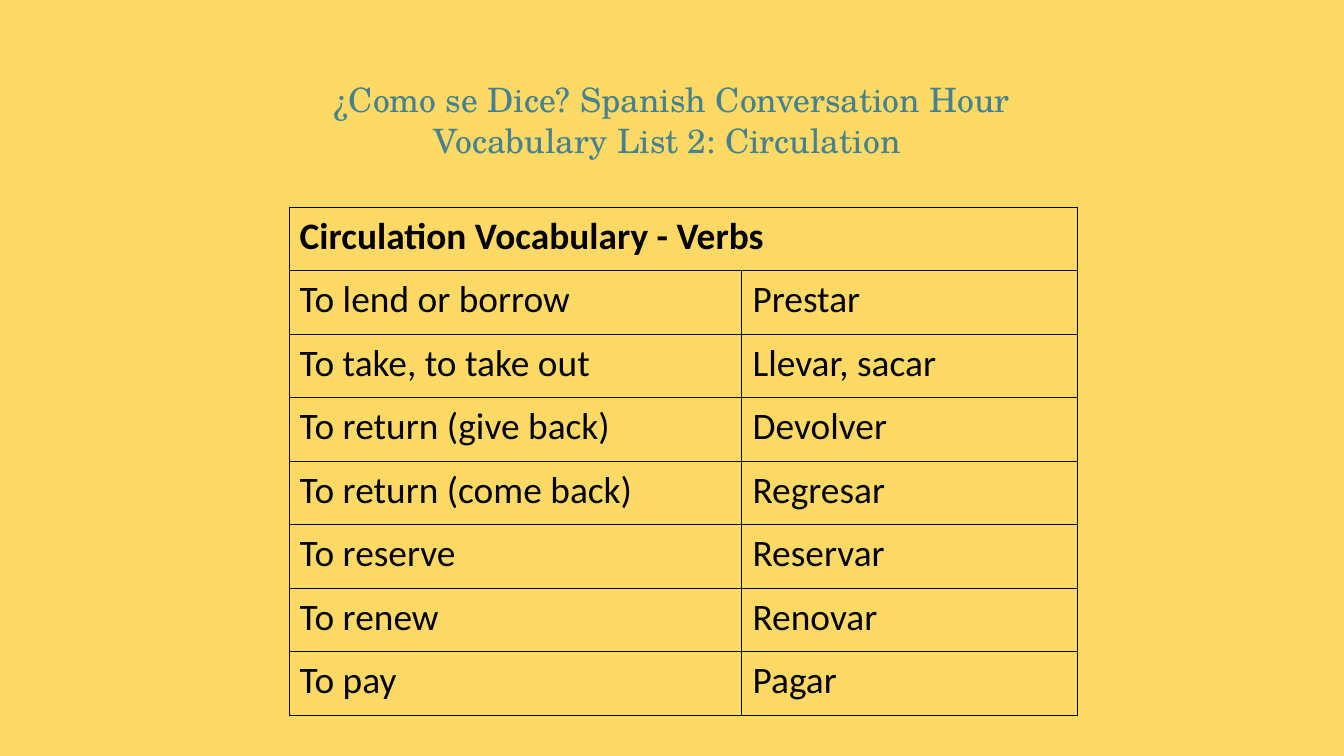
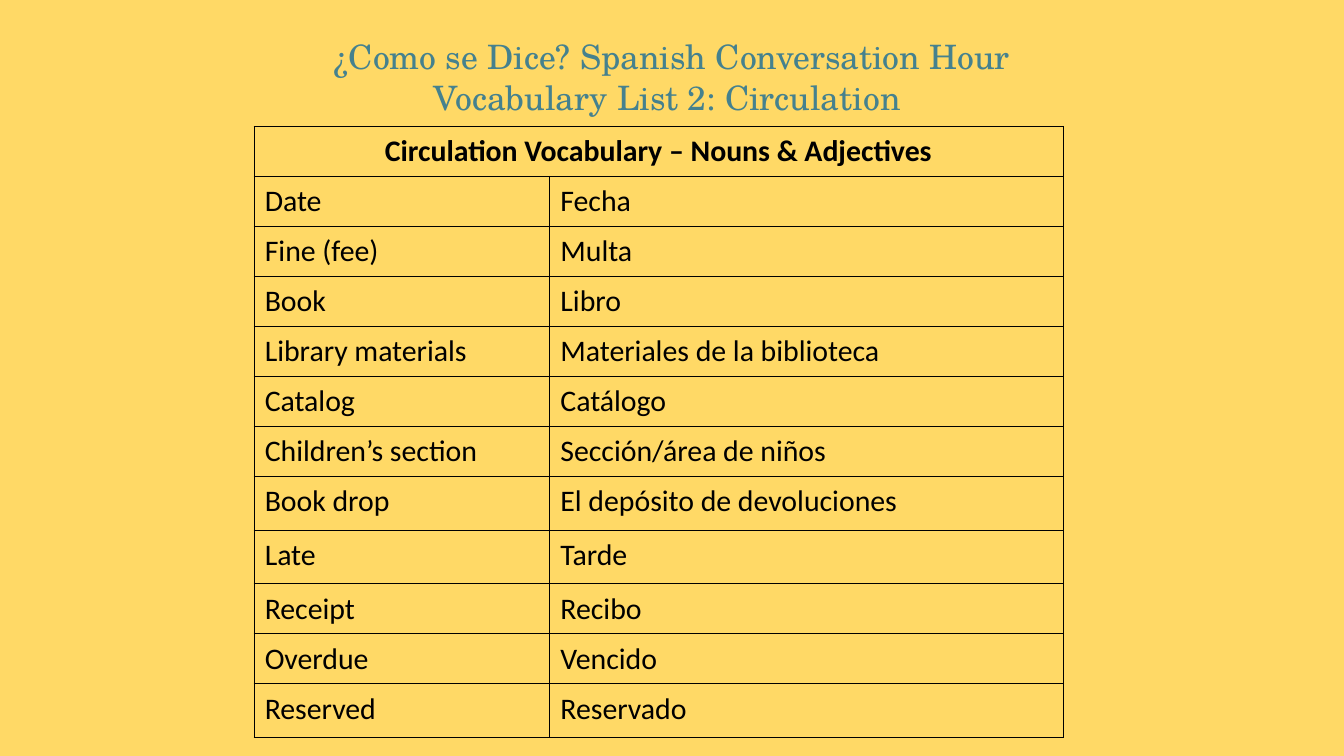
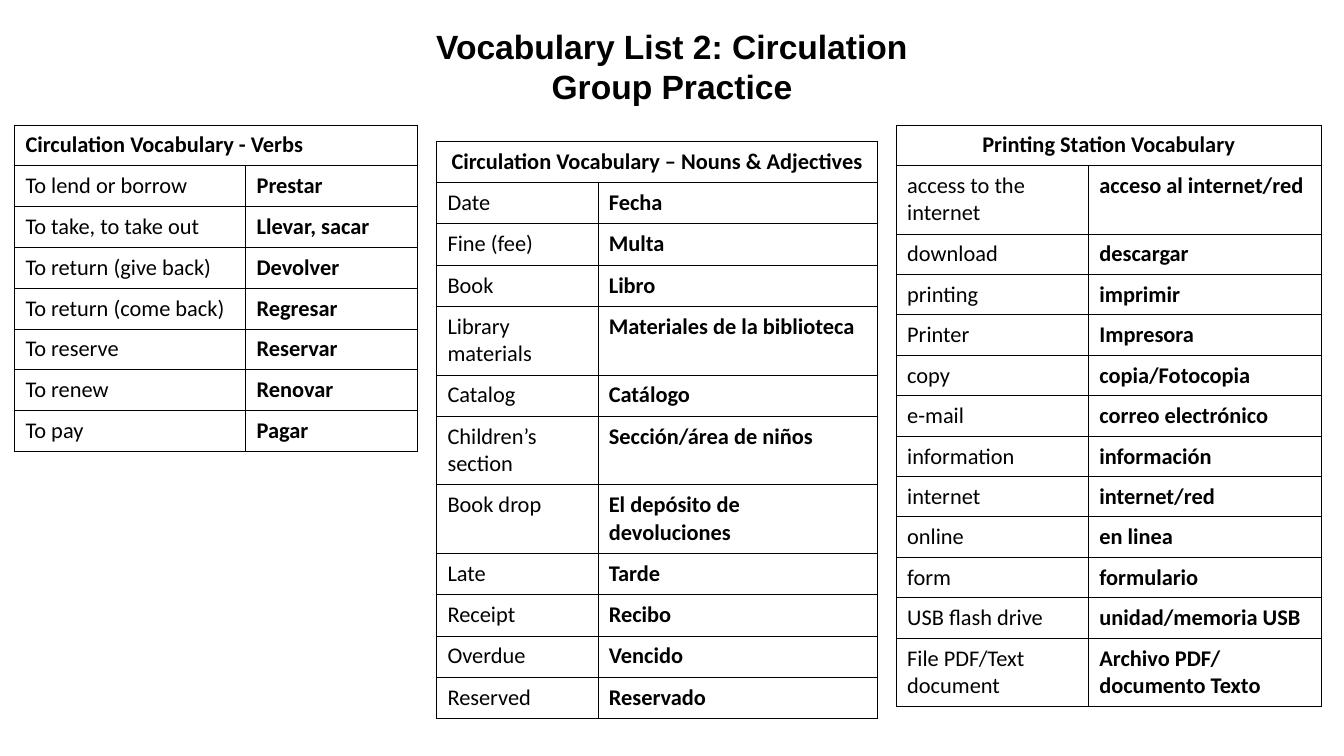
"""Build three Spanish vocabulary slides about library circulation."""
from lxml import etree
from pptx import Presentation
from pptx.dml.color import RGBColor
from pptx.enum import text
from pptx.oxml.ns import qn
from pptx.util import Inches, Pt

GOLD = RGBColor(0xFF, 0xD9, 0x66)
TEAL = RGBColor(0x45, 0x81, 0x8E)
BLACK = RGBColor(0, 0, 0)
WHITE = RGBColor(0xFF, 0xFF, 0xFF)
SCHOLA, ARIAL, CALIBRI = "TeX Gyre Schola", "Arial", "Calibri"
LEFT, CENTER = text.PP_ALIGN.LEFT, text.PP_ALIGN.CENTER

LESSON_TITLE = "¿Como se Dice? Spanish Conversation Hour\vVocabulary List 2: Circulation "
PRACTICE_TITLE = "Vocabulary List 2: Circulation\vGroup Practice"

VERBS = ("Circulation Vocabulary - Verbs", LEFT, [
    ("To lend or borrow", "Prestar"),
    ("To take, to take out", "Llevar, sacar"),
    ("To return (give back)", "Devolver"),
    ("To return (come back)", "Regresar"),
    ("To reserve", "Reservar"),
    ("To renew", "Renovar"),
    ("To pay", "Pagar"),
])
NOUNS = ("Circulation Vocabulary – Nouns & Adjectives", CENTER, [
    ("Date", "Fecha"),
    ("Fine (fee)", "Multa"),
    ("Book", "Libro"),
    ("Library materials", "Materiales de la biblioteca"),
    ("Catalog", "Catálogo"),
    ("Children’s section", "Sección/área de niños"),
    ("Book drop", "El depósito de devoluciones"),
    ("Late", "Tarde"),
    ("Receipt", "Recibo"),
    ("Overdue", "Vencido"),
    ("Reserved", "Reservado"),
])
PRINTING = ("Printing Station Vocabulary", CENTER, [
    ("access to the internet", "acceso al internet/red"),
    ("download", "descargar"),
    ("printing", "imprimir"),
    ("Printer", "Impresora"),
    ("copy", "copia/Fotocopia"),
    ("e-mail", "correo electrónico"),
    ("information", "información"),
    ("internet", "internet/red"),
    ("online", "en linea"),
    ("form", "formulario"),
    ("USB flash drive", "unidad/memoria USB"),
    ("File PDF/Text document", "Archivo PDF/ documento Texto"),
])


def style(p, name, size, color, bold, align):
    p.alignment = align
    p.font.name, p.font.size, p.font.bold = name, Pt(size), bold
    p.font.color.rgb = color


def add_slide(prs, background, title, top, height, name, color, bold=False):
    s = prs.slides.add_slide(prs.slide_layouts[6])
    s.background.fill.solid()
    s.background.fill.fore_color.rgb = background
    tf = s.shapes.add_textbox(Inches(0.34), Inches(top), Inches(9.32), Inches(height)).text_frame
    tf.word_wrap = True
    tf.margin_left = tf.margin_right = tf.margin_top = tf.margin_bottom = Inches(0.1)
    tf.text = title
    style(tf.paragraphs[0], name, 18, color, bold, CENTER)
    return s


def add_borders(cell):
    tc_pr = cell._tc.get_or_add_tcPr()
    for side in ("lnL", "lnR", "lnT", "lnB"):
        ln = etree.SubElement(tc_pr, qn(f"a:{side}"), w=str(Pt(0.5)))
        fill = etree.SubElement(ln, qn("a:solidFill"))
        etree.SubElement(fill, qn("a:srgbClr"), val=str(BLACK))


def add_vocabulary(s, vocabulary, left, top, widths, height, size,
                   tall_height=0, tall_rows=(), bold_spanish=False):
    heading, heading_align, words = vocabulary
    rows = [(heading, "")] + words
    row_height = (height - tall_height * len(tall_rows)) / (len(rows) - len(tall_rows))
    table = s.shapes.add_table(len(rows), 2, Inches(left), Inches(top),
                               Inches(sum(widths)), Inches(height)).table
    table.first_row = table.horz_banding = False
    for column, width in zip(table.columns, widths):
        column.width = Inches(width)
    for i, row in enumerate(rows):
        table.rows[i].height = Inches(tall_height if i in tall_rows else row_height)
        for j, word in enumerate(row):
            cell = table.cell(i, j)
            cell.margin_left = cell.margin_right = Inches(0.08)
            add_borders(cell)
            cell.fill.background()
            cell.text = word
            bold = i == 0 or (bold_spanish and j == 1)
            style(cell.text_frame.paragraphs[0], CALIBRI, size, BLACK, bold,
                  heading_align if i == 0 else LEFT)
    table.cell(0, 0).merge(table.cell(0, 1))


def main():
    prs = Presentation()
    prs.slide_width = Inches(10)
    prs.slide_height = prs.slide_width * 9 // 16

    s = add_slide(prs, GOLD, LESSON_TITLE, 0.49, 0.63, SCHOLA, TEAL)
    add_vocabulary(s, VERBS, 2.15, 1.54, (3.37, 2.5), 3.78, 20)

    s = add_slide(prs, GOLD, LESSON_TITLE, 0.17, 0.63, SCHOLA, TEAL)
    add_vocabulary(s, NOUNS, 1.89, 0.94, (2.2, 3.82), 4.55, 16, 0.4, (7, 8, 11))

    s = add_slide(prs, WHITE, PRACTICE_TITLE, 0.09, 0.7, ARIAL, BLACK, True)
    add_vocabulary(s, PRINTING, 6.67, 0.93, (1.43, 1.73), 4.33, 12, 0.51, (1, 12), True)
    add_vocabulary(s, VERBS, 0.11, 0.93, (1.72, 1.28), 2.43, 12, bold_spanish=True)
    add_vocabulary(s, NOUNS, 3.25, 1.05, (1.2, 2.08), 4.3, 12, 0.51, (4, 6, 7), True)

    prs.save("out.pptx")


if __name__ == "__main__":
    main()
